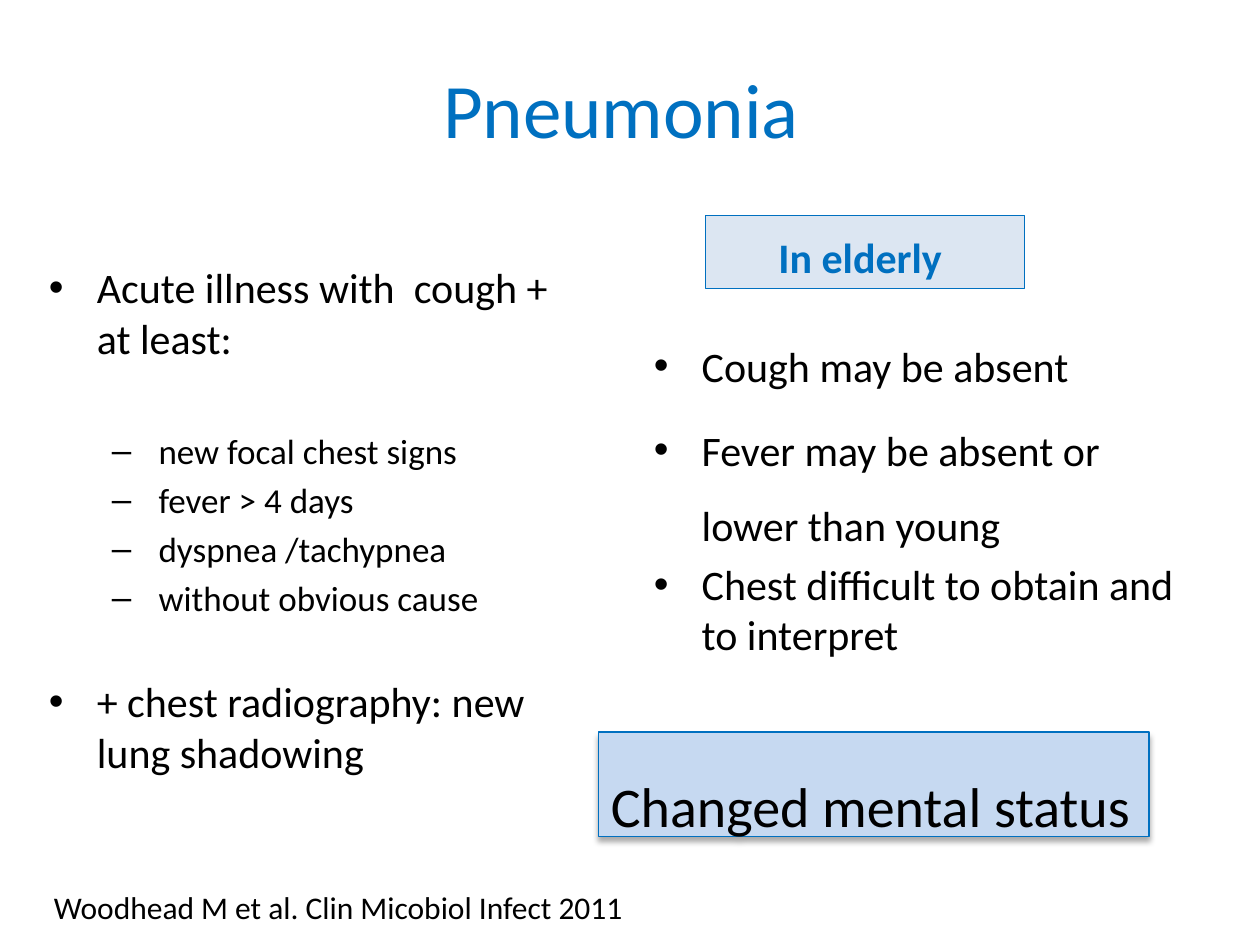
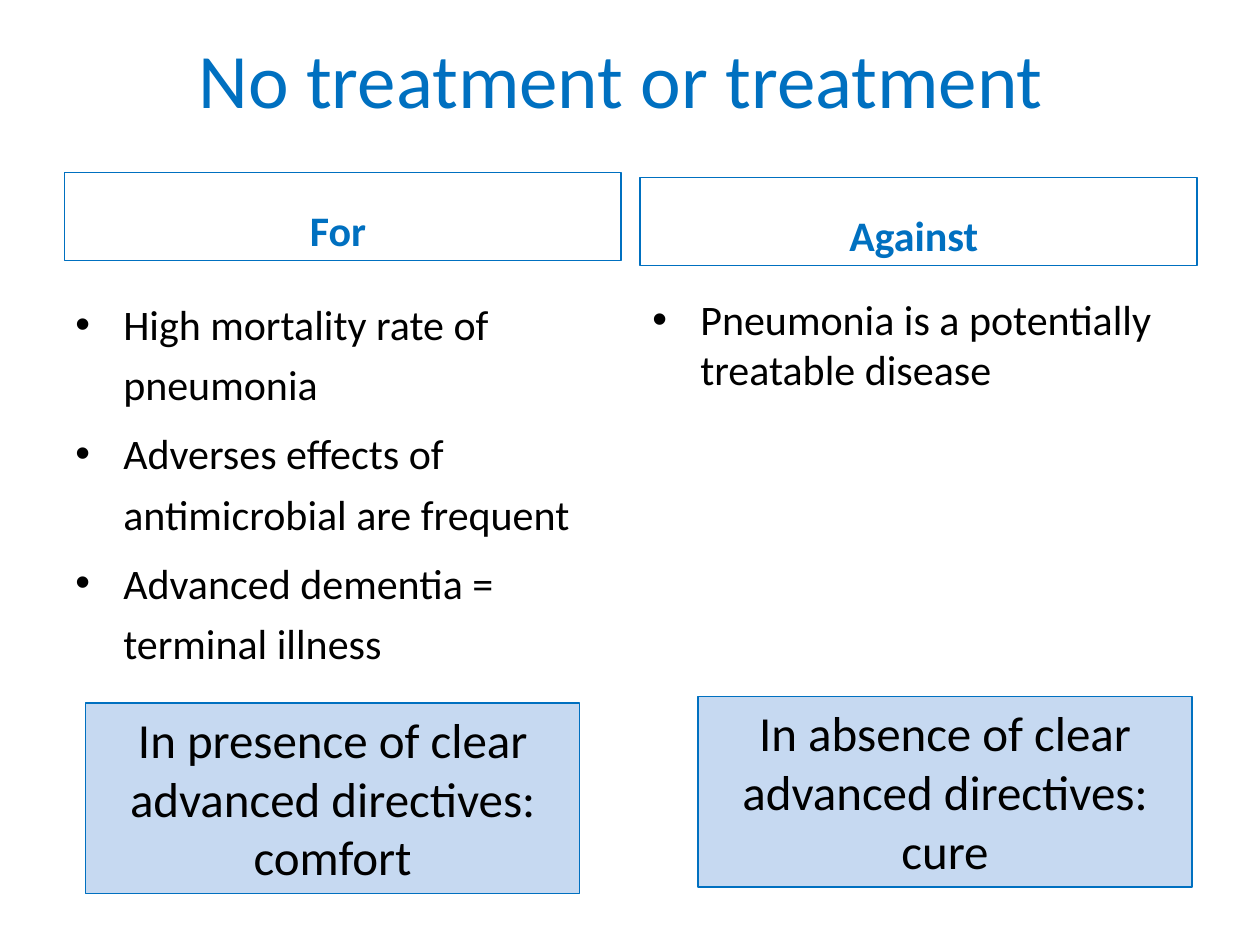
"""Build two slides on pneumonia in the elderly and on whether to treat it."""
from dataclasses import dataclass

from lxml import etree
from pptx import Presentation
from pptx.dml.color import RGBColor
from pptx.enum.shapes import MSO_SHAPE
from pptx.enum.text import MSO_ANCHOR, MSO_AUTO_SIZE, PP_ALIGN
from pptx.oxml.ns import qn
from pptx.util import Inches, Pt

LEFT, CENTER = PP_ALIGN.LEFT, PP_ALIGN.CENTER
TOP, MIDDLE, BOTTOM = MSO_ANCHOR.TOP, MSO_ANCHOR.MIDDLE, MSO_ANCHOR.BOTTOM
RECTANGLE = MSO_SHAPE.RECTANGLE
FIT_SHAPE = MSO_AUTO_SIZE.SHAPE_TO_FIT_TEXT


@dataclass(frozen=True)
class Theme:
    """Fonts, colours and type sizes shared by the slides."""
    font: str = "Calibri"
    accent: RGBColor = RGBColor(0x00, 0x70, 0xC0)
    text: RGBColor = RGBColor(0x00, 0x00, 0x00)
    heading_fill: RGBColor = RGBColor(0xDC, 0xE6, 0xF2)
    callout_fill: RGBColor = RGBColor(0xC6, 0xD9, 0xF1)
    title_size: int = 44
    status_size: int = 32
    callout_size: int = 28
    body_size: int = 24
    sub_size: int = 20
    source_size: int = 18
    line_width: float = 0.75
    paragraph_gap: float = 0.2


@dataclass(frozen=True)
class Item:
    """One bulleted line, with any extra gap above it in points."""
    text: str
    level: int = 0
    spacing: float = 1.0
    extra_gap: float = 0


class Deck:
    """The presentation, its theme and the slide being filled."""

    def __init__(self, theme):
        self.theme = theme
        self.presentation = Presentation()
        self.presentation.slide_width = Inches(10)
        self.presentation.slide_height = Inches(7.5)
        self.slide = None

    def add_slide(self, title, top):
        blank = self.presentation.slide_layouts[6]
        self.slide = self.presentation.slides.add_slide(blank)
        frame = self.text_box((0.5, top, 9, 1.25), MIDDLE)
        self.set_text(frame.paragraphs[0], title, self.theme.title_size,
                      self.theme.accent, CENTER)

    def text_box(self, area, anchor=TOP):
        frame = self.slide.shapes.add_textbox(*map(Inches, area)).text_frame
        frame.word_wrap = True
        frame.vertical_anchor = anchor
        return frame

    def set_text(self, paragraph, text, size, color=None, align=LEFT, bold=False):
        paragraph.text = text
        paragraph.alignment = align
        font = paragraph.font
        font.name, font.size, font.bold = self.theme.font, Pt(size), bold
        font.color.rgb = color or self.theme.text

    def box(self, area, fill, anchor):
        box = self.slide.shapes.add_shape(RECTANGLE, *map(Inches, area))
        box.shadow.inherit = False
        if fill is None:
            box.fill.background()
        else:
            box.fill.solid()
            box.fill.fore_color.rgb = fill
        box.line.color.rgb = self.theme.accent
        box.line.width = Pt(self.theme.line_width)
        box.text_frame.word_wrap = True
        box.text_frame.vertical_anchor = anchor
        return box

    def heading(self, text, area, fill=None):
        paragraph = self.box(area, fill, BOTTOM).text_frame.paragraphs[0]
        size = self.theme.body_size
        self.set_text(paragraph, text, size, self.theme.accent, CENTER, True)
        paragraph.space_before = Pt(size * self.theme.paragraph_gap)

    def callout(self, text, area):
        frame = self.box(area, self.theme.callout_fill, TOP).text_frame
        frame.auto_size = FIT_SHAPE
        self.set_text(frame.paragraphs[0], text, self.theme.callout_size,
                      align=CENTER)

    def status(self, text, area):
        box = self.box(area, self.theme.callout_fill, TOP)
        self.cast_shadow(box)
        frame = box.text_frame
        frame.word_wrap = False
        frame.auto_size = FIT_SHAPE
        self.set_text(frame.paragraphs[0], text, self.theme.status_size)
        frame.paragraphs[0].line_spacing = 1.5

    def cast_shadow(self, box):
        effects = box.element.spPr.find(qn("a:effectLst"))
        shadow = etree.SubElement(
            effects, qn("a:outerShdw"), blurRad=str(Pt(3.5)),
            dist=str(Pt(2.2)), dir="5400000", rotWithShape="0")
        color = etree.SubElement(shadow, qn("a:srgbClr"),
                                 val=str(self.theme.text))
        etree.SubElement(color, qn("a:alpha"), val="32000")

    def bullets(self, items, area):
        frame = self.text_box(area)
        for index, item in enumerate(items):
            paragraph = frame.add_paragraph() if index else frame.paragraphs[0]
            size = self.theme.sub_size if item.level else self.theme.body_size
            self.mark(paragraph, item.level)
            self.set_text(paragraph, item.text, size)
            paragraph.line_spacing = item.spacing
            paragraph.space_before = Pt(
                size * self.theme.paragraph_gap + item.extra_gap)

    def mark(self, paragraph, level):
        paragraph.level = level
        margin, hang, mark = ((0.38, 0.38, "•"), (0.87, 0.37, "–"))[level]
        properties = paragraph._p.get_or_add_pPr()
        properties.set("marL", str(Inches(margin)))
        properties.set("indent", str(-Inches(hang)))
        etree.SubElement(properties, qn("a:buFont"), typeface="Arial")
        etree.SubElement(properties, qn("a:buChar"), char=mark)

    def source(self, text, area):
        frame = self.text_box(area)
        self.set_text(frame.paragraphs[0], text, self.theme.source_size)


def add_pneumonia(deck):
    deck.add_slide("Pneumonia ", 0.23)
    deck.bullets([
        Item("Acute illness with  cough + at least:"),
        Item("new focal chest signs", 1, extra_gap=34),
        Item("fever > 4 days", 1),
        Item("dyspnea /tachypnea", 1),
        Item("without obvious cause", 1),
        Item("+ chest radiography: new lung shadowing", extra_gap=28),
    ], (0.29, 2.03, 4.35, 4.32))
    deck.heading("In elderly ", (5.6, 1.71, 2.53, 0.58),
                 deck.theme.heading_fill)
    deck.bullets([
        Item("Cough may be absent", spacing=1.5),
        Item("Fever may be absent or lower than young", spacing=1.5),
        Item("Chest difficult to obtain and to interpret"),
    ], (5.09, 2.45, 4.35, 3.04))
    deck.source("Woodhead M et al. Clin Micobiol Infect 2011",
                (0.33, 7, 7.53, 0.4))
    deck.status("Changed mental status", (4.75, 5.81, 4.37, 0.83))


def add_treatment(deck):
    deck.add_slide("No treatment or treatment ", -0.01)
    deck.heading("For ", (0.51, 1.37, 4.42, 0.7))
    reasons_for = ("High mortality rate of pneumonia",
                   "Adverses effects of antimicrobial are frequent",
                   "Advanced dementia = terminal illness")
    deck.bullets([Item(reason, spacing=1.2) for reason in reasons_for],
                 (0.5, 2.24, 4.32, 3.23))
    deck.heading("Against ", (5.08, 1.41, 4.42, 0.7))
    deck.bullets([Item("Pneumonia is a potentially treatable disease")],
                 (5.08, 2.28, 4.42, 4.32))
    deck.callout("In absence of clear advanced directives: cure",
                 (5.54, 5.53, 3.92, 1.51))
    deck.callout("In presence of clear advanced directives: comfort",
                 (0.68, 5.58, 3.92, 1.51))


def main():
    deck = Deck(Theme())
    add_pneumonia(deck)
    add_treatment(deck)
    deck.presentation.save("out.pptx")


if __name__ == "__main__":
    main()
